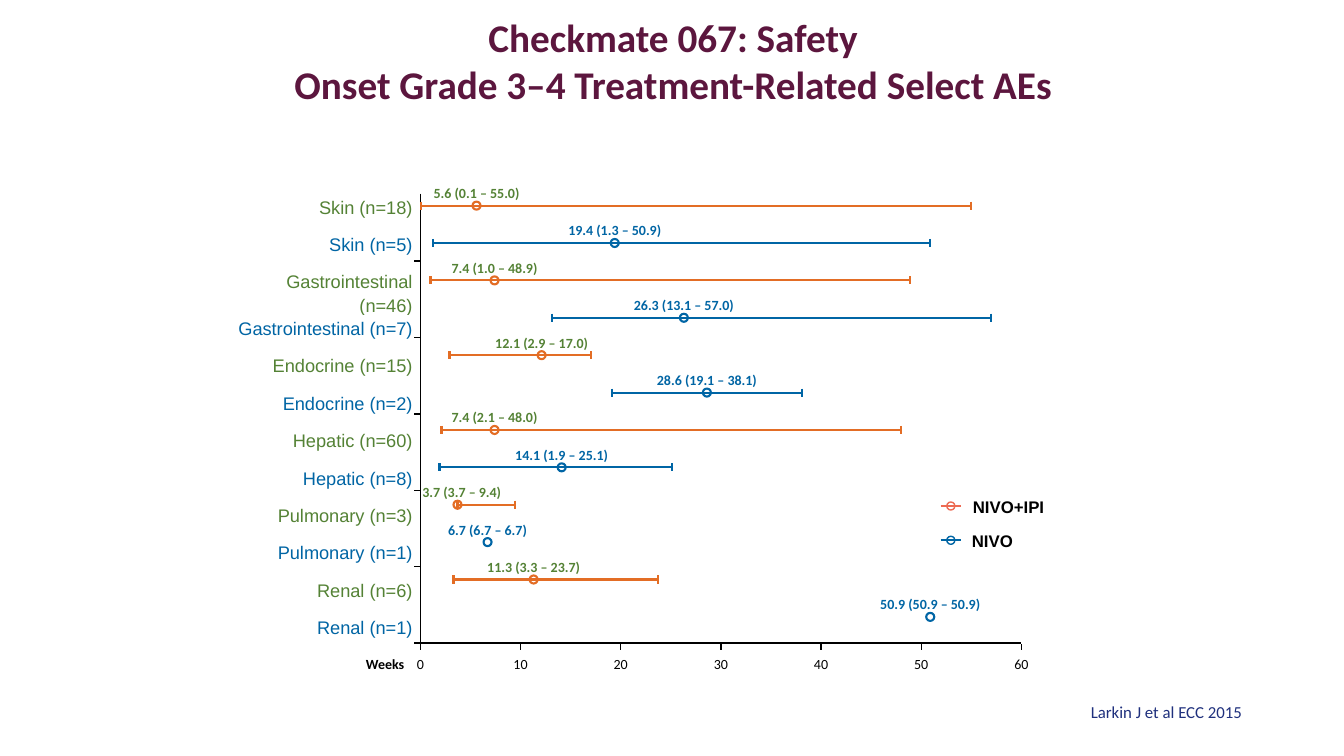
import pptx
import pptx.util
from pptx.dml.color import RGBColor
from pptx.enum.shapes import MSO_CONNECTOR, MSO_SHAPE
from pptx.enum.text import MSO_ANCHOR, PP_ALIGN
from pptx.oxml.ns import qn
from pptx.util import Inches

ORANGE = RGBColor(0xE3, 0x6D, 0x25)
BLUE = RGBColor(0x00, 0x65, 0xA5)
CORAL = RGBColor(0xED, 0x6B, 0x53)
GREEN_TEXT = RGBColor(0x54, 0x82, 0x35)
BLUE_TEXT = RGBColor(0x00, 0x65, 0xA4)
PLUM = RGBColor(0x5C, 0x16, 0x3E)
NAVY = RGBColor(0x1F, 0x30, 0x7D)
BLACK = RGBColor(0, 0, 0)
WHITE = RGBColor(0xFF, 0xFF, 0xFF)

TITLE = ["Checkmate 067: Safety", "Onset Grade 3–4 Treatment-Related Select AEs"]
CITATION = "Larkin J et al ECC 2015"

# Category, median, earliest and latest onset in weeks; arms alternate
ONSETS = [
    ("Skin (n=18)", 5.6, 0.1, 55.0),
    ("Skin (n=5)", 19.4, 1.3, 50.9),
    ("Gastrointestinal (n=46)", 7.4, 1.0, 48.9),
    ("Gastrointestinal (n=7)", 26.3, 13.1, 57.0),
    ("Endocrine (n=15)", 12.1, 2.9, 17.0),
    ("Endocrine (n=2)", 28.6, 19.1, 38.1),
    ("Hepatic (n=60)", 7.4, 2.1, 48.0),
    ("Hepatic (n=8)", 14.1, 1.9, 25.1),
    ("Pulmonary (n=3)", 3.7, 3.7, 9.4),
    ("Pulmonary (n=1)", 6.7, 6.7, 6.7),
    ("Renal (n=6)", 11.3, 3.3, 23.7),
    ("Renal (n=1)", 50.9, 50.9, 50.9),
]
ARMS = [(ORANGE, GREEN_TEXT), (BLUE, BLUE_TEXT)]
LEGEND = [("NIVO+IPI", CORAL, 5.02, 9.55, 0.92), ("NIVO", BLUE_TEXT, 5.36, 9.54, 0.61)]

AXIS_LEFT, AXIS_RIGHT, AXIS_TOP, AXIS_BOTTOM = 4.17, 10.13, 1.92, 6.38
MAX_WEEK, WEEK_STEP = 60, 10
FIRST_ROW, LAST_ROW = 2.04, 6.12
ROW_PITCH = (LAST_ROW - FIRST_ROW) / (len(ONSETS) - 1)
FIRST_GROUP_TICK, GROUPS = 2.59, 6
GROUP_PITCH = (AXIS_BOTTOM - FIRST_GROUP_TICK) / (GROUPS - 1)
MARKER = 0.08
MIN_LABEL_CENTER = AXIS_LEFT + 0.41  # keeps value labels clear of the axis

presentation = pptx.Presentation()
presentation.slide_width = Inches(13.33)
presentation.slide_height = Inches(7.5)
slide = presentation.slides.add_slide(presentation.slide_layouts[6])


def week_x(week):
    return AXIS_LEFT + week * (AXIS_RIGHT - AXIS_LEFT) / MAX_WEEK


def format_paragraph(paragraph, text, color, size, name, bold=False):
    run = paragraph.add_run()
    run.text = text
    values = {"size": pptx.util.Pt(size), "name": name, "bold": bold}
    for attribute, value in values.items():
        setattr(run.font, attribute, value)
    run.font.color.rgb = color


def add_text(lines, box, color, size, name="Calibri", bold=False,
             align=PP_ALIGN.CENTER, anchor=MSO_ANCHOR.MIDDLE, wrap=False):
    shape = slide.shapes.add_textbox(*map(Inches, box))
    frame = shape.text_frame
    frame.word_wrap = wrap
    frame.vertical_anchor = anchor
    for index, line in enumerate(lines):
        paragraph = frame.add_paragraph() if index else frame.paragraphs[0]
        paragraph.alignment = align
        format_paragraph(paragraph, line, color, size, name, bold)
    return shape


def clear_margins(frame):
    for side in ("left", "top", "right", "bottom"):
        setattr(frame, "margin_" + side, 0)


def add_line(x1, y1, x2, y2, color, width):
    line = slide.shapes.add_connector(MSO_CONNECTOR.STRAIGHT, *map(Inches, (x1, y1, x2, y2)))
    line.line.color.rgb = color
    line.line.width = pptx.util.Pt(width)
    properties = line._element.spPr
    properties.append(properties.makeelement(qn("a:effectLst"), {}))


def add_marker(x, y, color, width):
    marker = slide.shapes.add_shape(
        MSO_SHAPE.OVAL, Inches(x - MARKER / 2), Inches(y - MARKER / 2),
        Inches(MARKER), Inches(MARKER))
    marker.shadow.inherit = False
    marker.fill.background()
    marker.line.color.rgb = color
    marker.line.width = pptx.util.Pt(width)


def add_category_table():
    frame = slide.shapes.add_table(
        len(ONSETS), 1, Inches(2.26), Inches(1.93),
        Inches(1.9), Inches(ROW_PITCH * len(ONSETS)))
    table = frame.table
    table.first_row = table.horz_banding = False
    for index, (category, *_) in enumerate(ONSETS):
        cell = table.cell(index, 0)
        cell.fill.background()
        cell.margin_left = cell.margin_right = Inches(0.07)
        cell.margin_top = cell.margin_bottom = 0
        paragraph = cell.text_frame.paragraphs[0]
        paragraph.alignment = PP_ALIGN.RIGHT
        paragraph.line_spacing = 1.15
        format_paragraph(paragraph, category, ARMS[index % 2][1], 13, "Arial")


def add_axes():
    builder = slide.shapes.build_freeform(Inches(AXIS_LEFT), Inches(AXIS_TOP))
    corners = [(AXIS_LEFT, AXIS_BOTTOM), (AXIS_RIGHT, AXIS_BOTTOM)]
    builder.add_line_segments([(Inches(x), Inches(y)) for x, y in corners], close=False)
    axes = builder.convert_to_shape()
    axes.shadow.inherit = False
    axes.fill.background()
    axes.line.color.rgb = BLACK
    axes.line.width = pptx.util.Pt(1)
    for week in range(0, MAX_WEEK + 1, WEEK_STEP):
        x = week_x(week)
        add_line(x, 6.39, x, 6.45, BLACK, 1)
        add_text([str(week)], (x - 0.18, 6.47, 0.36, 0.24), BLACK, 10)
    for group in range(GROUPS):
        y = FIRST_GROUP_TICK + group * GROUP_PITCH
        add_line(4.11, y, 4.18, y, BLACK, 1)
    axis_title = add_text(["Weeks"], (3.52, 6.47, 0.6, 0.24), BLACK, 10, bold=True)
    clear_margins(axis_title.text_frame)


def add_onset(index, median, earliest, latest):
    """Draw one range bar with end caps, median marker and value label."""
    color, text_color = ARMS[index % 2]
    y = FIRST_ROW + index * ROW_PITCH
    x = week_x(median)
    if latest > earliest:
        start, end = week_x(earliest), week_x(latest)
        add_line(start, y, end, y, color, 1.5)
        for cap in (start, end):
            add_line(cap, y - MARKER / 2, cap, y + MARKER / 2, color, 1.5)
    add_marker(x, y, color, 1.5)
    label_center = max(x, MIN_LABEL_CENTER)
    label = add_text([f"{median:.1f} ({earliest:.1f} – {latest:.1f})"],
                     (label_center - 0.5, y - 0.21, 1, 0.17), text_color, 10, bold=True)
    clear_margins(label.text_frame)


add_category_table()
add_axes()
for index, (_, *weeks) in enumerate(ONSETS):
    add_onset(index, *weeks)

for arm, color, y, text_left, text_width in LEGEND:
    add_line(9.33, y, 9.53, y, color, 1.25)
    add_marker(9.43, y, color, 1)
    add_text([arm], (text_left, y - 0.14, text_width, 0.3), BLACK, 12, "Arial",
             bold=True, align=PP_ALIGN.LEFT, anchor=MSO_ANCHOR.TOP)

add_text(TITLE, (2.12, 0, 9.11, 1.19), PLUM, 28, bold=True, wrap=True)
citation = add_text([CITATION], (10.72, 6.91, 1.98, 0.3), NAVY, 12,
                    align=PP_ALIGN.LEFT, anchor=MSO_ANCHOR.TOP)
citation.fill.solid()
citation.fill.fore_color.rgb = WHITE

presentation.save("out.pptx")
